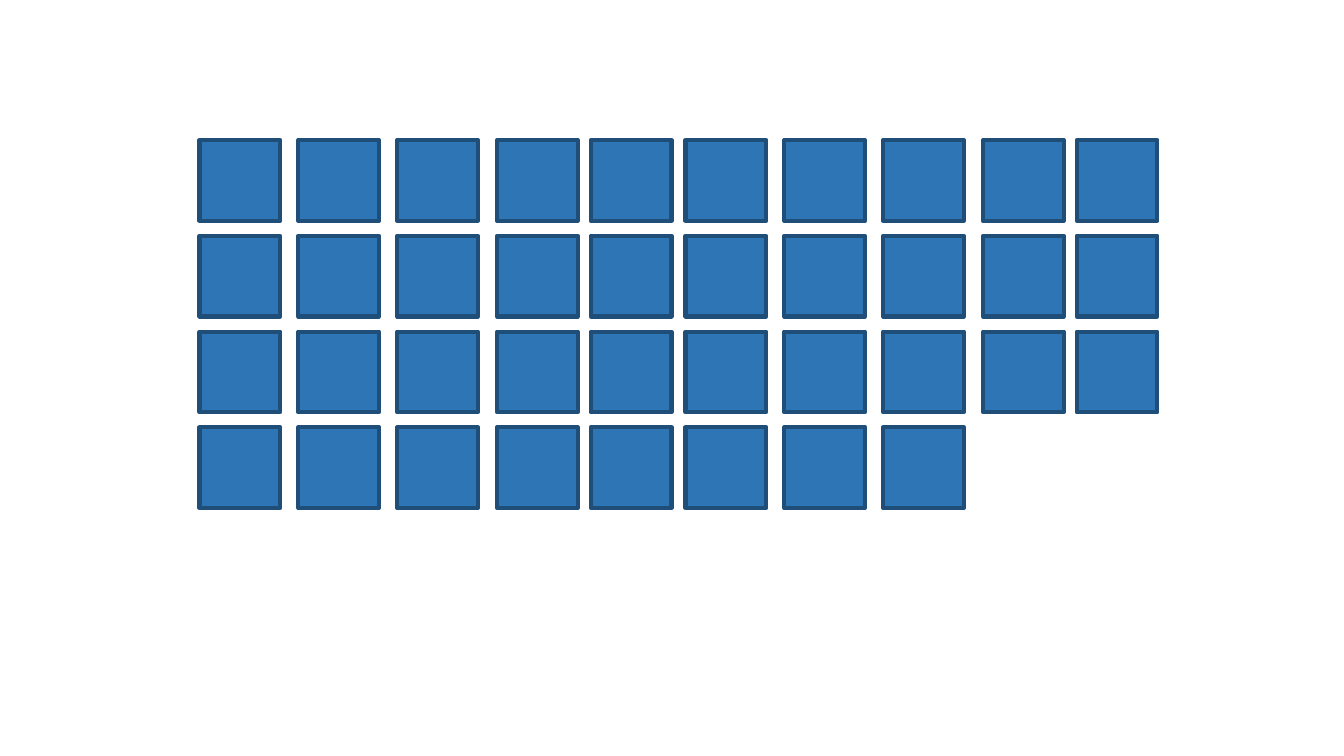
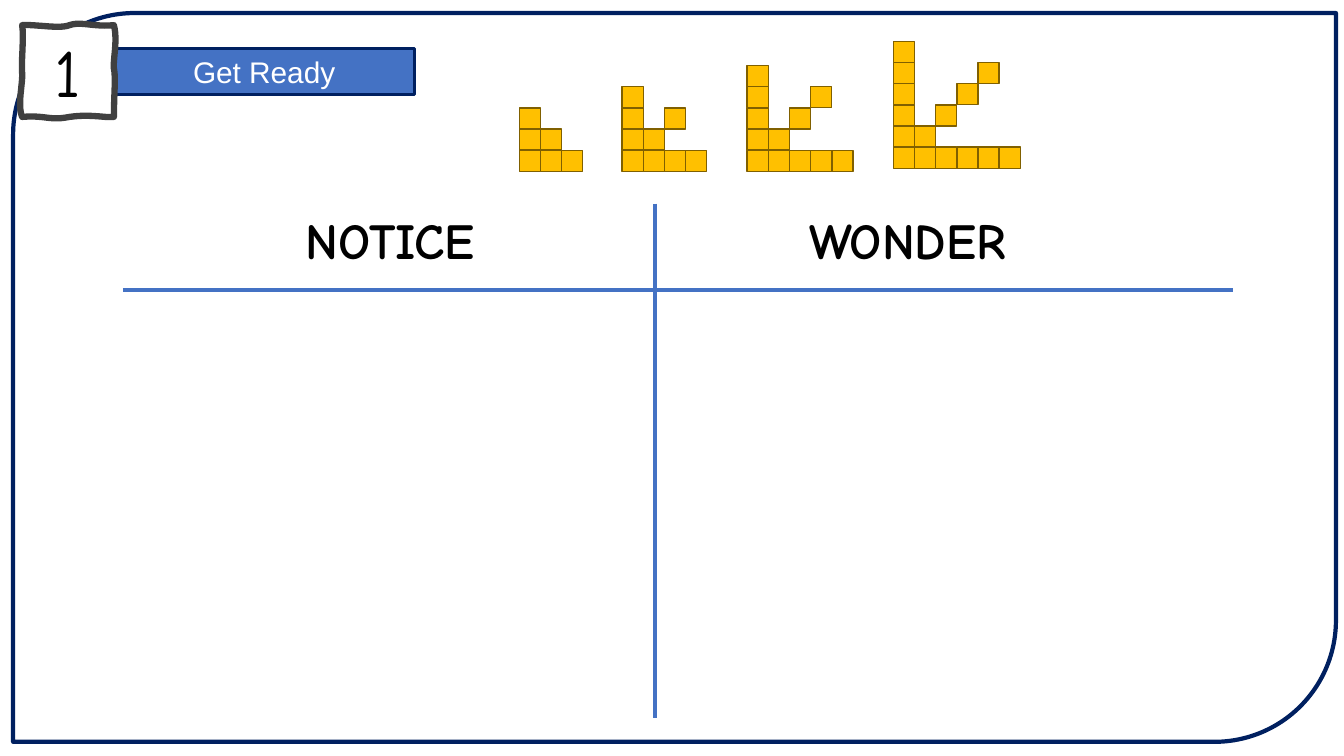
from lxml import etree
from pptx import Presentation
from pptx import util as u
from pptx.dml.color import RGBColor
from pptx.enum import shapes, text
from pptx.oxml import ns

NAVY, BLUE, WHITE, BLACK = "002060", "4472C4", "FFFFFF", "000000"
TILE, TILE_EDGE = "2E75B6", "1F4E79"
GOLD, GOLD_EDGE = "FFC000", "806000"
INK = "404040"
SANS, HAND = "Arial", "Comic Neue"


def rgb(color):
    return RGBColor.from_string(color)


def write(sp, content, size=18, font=SANS, color=BLACK, bold=False):
    tf = sp.text_frame
    tf.word_wrap = True
    tf.vertical_anchor = text.MSO_ANCHOR.MIDDLE
    p = tf.paragraphs[0]
    p.alignment = text.PP_ALIGN.CENTER
    r = p.add_run()
    r.text = content
    r.font.size = u.Pt(size)
    r.font.name = font
    r.font.bold = bold
    r.font.color.rgb = rgb(color)


def curve_points(start, curves, steps=12):
    points = [start]
    for x1, y1, x2, y2, x3, y3 in curves:
        x0, y0 = points[-1]
        for i in range(1, steps + 1):
            t = i / steps
            a, b, c, d = (1 - t) ** 3, 3 * t * (1 - t) ** 2, 3 * t * t * (1 - t), t ** 3
            points.append((a * x0 + b * x1 + c * x2 + d * x3,
                           a * y0 + b * y1 + c * y2 + d * y3))
    return points


class Deck:
    """Holds the shared style and the current slide, and draws each kind of element."""

    def __init__(self):
        self.prs = Presentation()
        self.prs.slide_width = u.Inches(13.33)
        self.prs.slide_height = u.Inches(7.5)
        self.s = None

    def slide(self):
        self.s = self.prs.slides.add_slide(self.prs.slide_layouts[6])

    def style(self, sp, fill, line, width):
        sp.shadow.inherit = False
        if fill:
            sp.fill.solid()
            sp.fill.fore_color.rgb = rgb(fill)
        else:
            sp.fill.background()
        sp.line.color.rgb = rgb(line)
        sp.line.width = u.Pt(width)
        return sp

    def box(self, x, y, w, h, fill, line, width, kind="RECTANGLE", parent=None):
        sp = (parent or self.s).shapes.add_shape(
            shapes.MSO_SHAPE[kind], u.Inches(x), u.Inches(y), u.Inches(w), u.Inches(h))
        return self.style(sp, fill, line, width)

    def outline(self, points, fill, line, width):
        emu = [(u.Inches(x), u.Inches(y)) for x, y in points]
        builder = self.s.shapes.build_freeform(*emu[0])
        builder.add_line_segments(emu[1:], close=True)
        return self.style(builder.convert_to_shape(), fill, line, width)

    def label(self, x, y, w, h, content, **fmt):
        sp = self.s.shapes.add_textbox(u.Inches(x), u.Inches(y), u.Inches(w), u.Inches(h))
        write(sp, content, **fmt)

    def line(self, x1, y1, x2, y2, color=BLUE, width=3):
        cn = self.s.shapes.add_connector(
            shapes.MSO_CONNECTOR.STRAIGHT,
            u.Inches(x1), u.Inches(y1), u.Inches(x2), u.Inches(y2))
        cn.line.color.rgb = rgb(color)
        cn.line.width = u.Pt(width)
        etree.SubElement(cn._element.spPr, ns.qn("a:effectLst"))

    def pattern(self, left, bottom, n, cell=0.21):
        group = self.s.shapes.add_group_shape()
        column = [(0, k) for k in range(n)]
        base = [(k, 0) for k in range(1, n)]
        diagonal = [(k, k) for k in range(1, n - 1)]
        for col, row in column + base + diagonal:
            self.box(left + col * cell, bottom - row * cell, cell, cell,
                     GOLD, GOLD_EDGE, 1, parent=group)


def tiles_slide(deck):
    deck.slide()
    half = [1.98, 2.96, 3.94, 4.93, 5.86]
    columns = half + [x + 4.82 for x in half]
    for i in range(38):
        row, col = divmod(i, len(columns))
        deck.box(columns[col], 1.39 + row * 0.95, 0.8, 0.8, TILE, TILE_EDGE, 3)


def notice_slide(deck):
    deck.slide()
    deck.box(0.13, 0.13, 13.12, 7.23, None, NAVY, 3, kind="ROUND_2_DIAG_RECTANGLE")
    banner = deck.box(1.13, 0.48, 2.98, 0.46, BLUE, NAVY, 2.25)
    write(banner, "Get Ready", size=21.3, color=WHITE)

    sketch = curve_points((0.22, 0.25), [
        (0.36, 0.24, 0.59, 0.29, 0.69, 0.25),
        (0.8, 0.21, 0.93, 0.27, 1.13, 0.25),
        (1.17, 0.4, 1.12, 0.59, 1.13, 0.68),
        (1.15, 0.77, 1.13, 0.95, 1.13, 1.16),
        (1.03, 1.17, 0.9, 1.13, 0.69, 1.16),
        (0.49, 1.2, 0.45, 1.14, 0.22, 1.16),
        (0.17, 1.04, 0.23, 0.82, 0.22, 0.72),
        (0.21, 0.62, 0.24, 0.35, 0.22, 0.25),
    ])
    badge = deck.outline(sketch, WHITE, INK, 4.5)
    write(badge, "1", size=48, font=HAND)

    for center, heading in [(3.87, "NOTICE"), (9, "WONDER")]:
        deck.label(center - 2.5, 2.02, 5, 0.71, heading, size=36, font=HAND, bold=True)

    for left, bottom, n in [(5.15, 1.49, 3), (6.17, 1.49, 4), (7.41, 1.49, 5), (8.86, 1.46, 6)]:
        deck.pattern(left, bottom, n)

    deck.line(1.22, 2.88, 12.23, 2.88)
    deck.line(6.5, 2.02, 6.5, 7.12)


def main():
    deck = Deck()
    tiles_slide(deck)
    notice_slide(deck)
    deck.prs.save("out.pptx")


if __name__ == "__main__":
    main()
